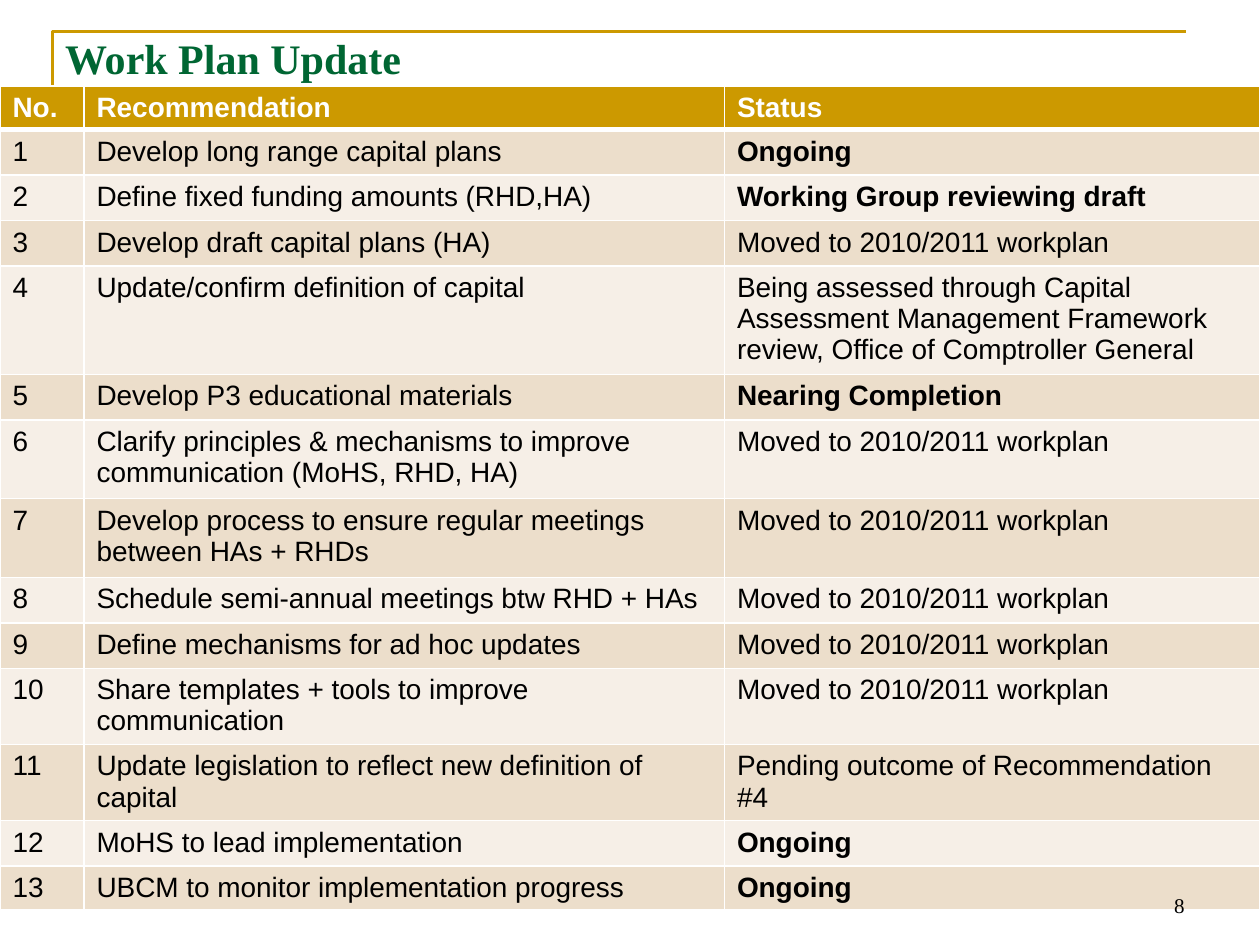
"""Build the Work Plan Update slide with its table of recommendations."""
from lxml.etree import SubElement
from pptx import Presentation
from pptx.dml.color import RGBColor
from pptx.enum.text import MSO_ANCHOR, PP_ALIGN
from pptx.oxml.ns import qn
from pptx.util import Pt

GOLD = RGBColor(0xCC, 0x99, 0x00)
GREEN = RGBColor(0x00, 0x66, 0x33)
SAND = RGBColor(0xEC, 0xDE, 0xCB)
CREAM = RGBColor(0xF6, 0xEF, 0xE7)
WHITE = RGBColor(0xFF, 0xFF, 0xFF)
BLACK = RGBColor(0x00, 0x00, 0x00)

TITLE = "Work Plan Update"
SLIDE_NUMBER = "8"
MOVED = "Moved to 2010/2011 workplan"
HEADER = ("No.", "Recommendation", "Status")
RECOMMENDATIONS = [
    ("Develop long range capital plans", "Ongoing", 26),
    ("Define fixed funding amounts (RHD,HA)", "Working Group reviewing draft", 26),
    ("Develop draft capital plans (HA)", MOVED, 26),
    ("Update/confirm definition of capital",
     "Being assessed through Capital Assessment Management Framework review, "
     "Office of Comptroller General", 62),
    ("Develop P3 educational materials", "Nearing Completion", 26),
    ("Clarify principles & mechanisms to improve communication (MoHS, RHD, HA)", MOVED, 45),
    ("Develop process to ensure regular meetings between HAs + RHDs", MOVED, 45),
    ("Schedule semi-annual meetings btw RHD + HAs", MOVED, 26),
    ("Define mechanisms for ad hoc updates", MOVED, 26),
    ("Share templates + tools to improve communication", MOVED, 43.5),
    ("Update legislation to reflect new definition of capital",
     "Pending outcome of Recommendation #4", 43.5),
    ("MoHS to lead implementation", "Ongoing", 26),
    ("UBCM to monitor implementation progress", "Ongoing", 25),
]
BOLD_STATUSES = {"Ongoing", "Working Group reviewing draft", "Nearing Completion"}
COLUMN_WIDTHS = (48, 366, 306)
HEADER_HEIGHT = 25
TABLE_TOP = 49


def format_text(text_frame, font_name, size, color, bold=False):
    for paragraph in text_frame.paragraphs:
        for run in paragraph.runs:
            run.font.name = font_name
            run.font.size = Pt(size)
            run.font.color.rgb = color
            run.font.bold = bold


def set_borders(cell, top, bottom):
    properties = cell._tc.get_or_add_tcPr()
    widths = {"a:lnL": 1, "a:lnR": 1, "a:lnT": top, "a:lnB": bottom}
    for index, (tag, width) in enumerate(widths.items()):
        line = properties.makeelement(qn(tag), {"w": str(Pt(width))})
        fill = SubElement(line, qn("a:solidFill"))
        SubElement(fill, qn("a:srgbClr"), val=str(WHITE))
        properties.insert(index, line)


def add_rules(slide):
    builder = slide.shapes.build_freeform(Pt(30), Pt(66))
    builder.add_line_segments([(Pt(30), Pt(18)), (Pt(678), Pt(18))], close=False)
    corner = builder.convert_to_shape()
    corner.fill.background()
    corner.shadow.inherit = False
    footer_rule = slide.shapes.add_connector(1, Pt(36), Pt(486), Pt(684), Pt(486))
    SubElement(footer_rule._element.spPr, qn("a:effectLst"))
    for shape in (corner, footer_rule):
        shape.line.color.rgb = GOLD
        shape.line.width = Pt(1.5)


def add_work_plan(slide):
    rows = [HEADER] + [(str(number), recommendation, status) for number,
                       (recommendation, status, _) in enumerate(RECOMMENDATIONS, 1)]
    heights = [HEADER_HEIGHT] + [height for _, _, height in RECOMMENDATIONS]
    table = slide.shapes.add_table(len(rows), len(HEADER), 0, Pt(TABLE_TOP),
                                   Pt(sum(COLUMN_WIDTHS)), Pt(sum(heights))).table
    for column, width in zip(table.columns, COLUMN_WIDTHS):
        column.width = Pt(width)
    for row_index, (texts, height) in enumerate(zip(rows, heights)):
        table.rows[row_index].height = Pt(height)
        is_header = row_index == 0
        fill_color = GOLD if is_header else SAND if row_index % 2 else CREAM
        for column_index, text in enumerate(texts):
            cell = table.cell(row_index, column_index)
            cell.text_frame.text = text
            format_text(cell.text_frame, "Arial", 16, WHITE if is_header else BLACK,
                        is_header or text in BOLD_STATUSES)
            cell.fill.solid()
            cell.fill.fore_color.rgb = fill_color
            set_borders(cell, 3 if row_index == 1 else 1, 3 if is_header else 1)


def add_slide_number(slide):
    box = slide.shapes.add_textbox(Pt(516), Pt(492), Pt(168), Pt(36))
    text_frame = box.text_frame
    text_frame.word_wrap = True
    text_frame.vertical_anchor = MSO_ANCHOR.BOTTOM
    text_frame.text = SLIDE_NUMBER
    text_frame.paragraphs[0].alignment = PP_ALIGN.RIGHT
    format_text(text_frame, "Times New Roman", 12, BLACK)


def place_title(slide):
    title = slide.shapes.title
    title.left, title.top, title.width, title.height = Pt(30), Pt(15), Pt(342), Pt(36)
    text_frame = title.text_frame
    text_frame.text = TITLE
    text_frame.vertical_anchor = MSO_ANCHOR.TOP
    text_frame.paragraphs[0].alignment = PP_ALIGN.LEFT
    format_text(text_frame, "Times New Roman", 24, GREEN, True)


def main():
    presentation = Presentation()
    presentation.slide_width, presentation.slide_height = Pt(720), Pt(540)
    slide = presentation.slides.add_slide(presentation.slide_layouts[5])
    add_rules(slide)
    add_work_plan(slide)
    add_slide_number(slide)
    place_title(slide)
    presentation.save("out.pptx")


if __name__ == "__main__":
    main()
